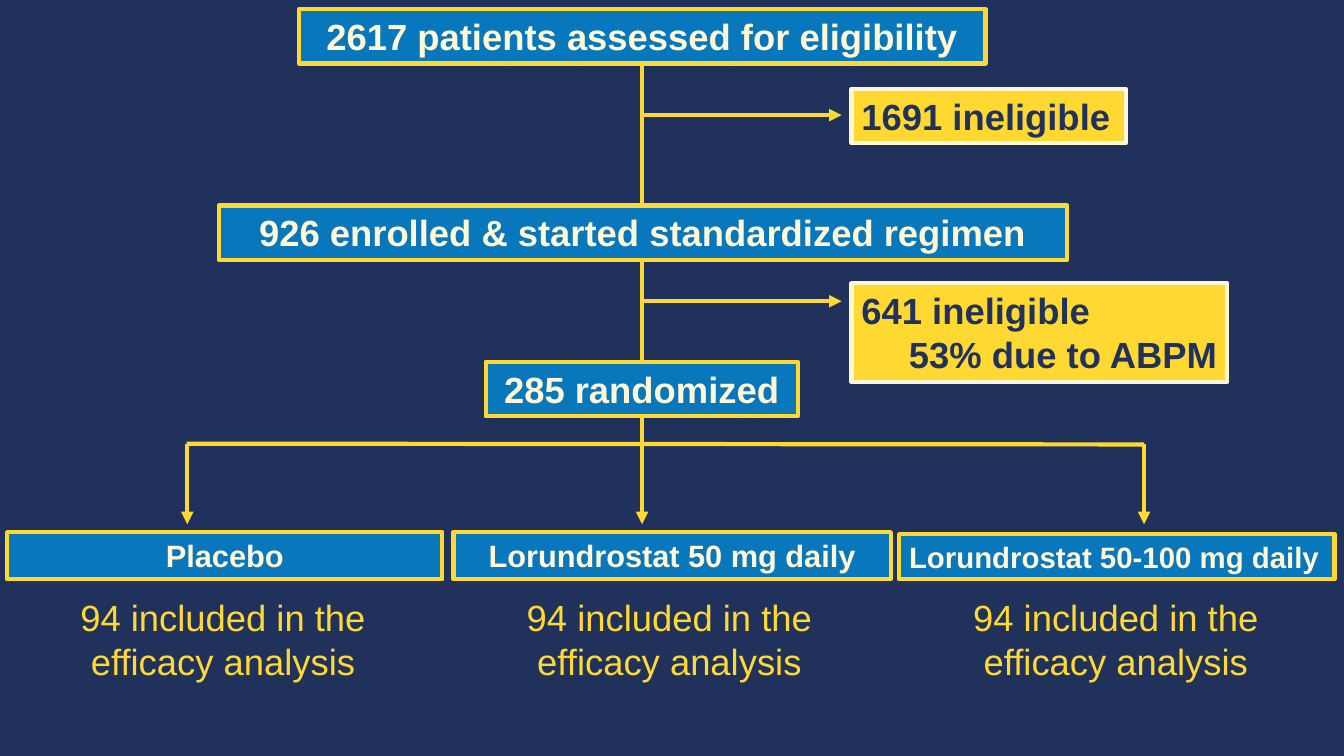
from dataclasses import dataclass

from lxml.etree import SubElement
from pptx import Presentation
from pptx.dml.color import RGBColor as Rgb
from pptx.enum.shapes import MSO_CONNECTOR as Conn, MSO_SHAPE as Form
from pptx.enum.text import MSO_ANCHOR as Anchor, PP_ALIGN as Align
from pptx.oxml.ns import qn
from pptx.slide import Slide
from pptx.text.text import TextFrame
from pptx.util import Cm, Pt

HUES = {
    "navy": "20325C",
    "blue": "0877BC",
    "gold": "FFD932",
    "cream": "FFF7D6",
}
MID = 16.18
FORK = 11.18
TIP = 13.21
SIDE = 21.21


@dataclass
class Box:
    text: str
    left: float
    top: float
    width: float
    height: float = 1.37
    size: int = 26
    aligns: tuple[Align, ...] = (Align.CENTER,)
    fill: str = "blue"
    edge: str = "gold"
    ink: str = "cream"


@dataclass
class Link:
    x1: float
    y1: float
    x2: float
    y2: float
    arrow: bool = False


STAGES = [
    Box("2617 patients assessed for eligibility", 7.54, 0.23, 17.3),
    Box("926 enrolled & started standardized regimen", 5.51, 5.18, 21.39),
    Box("285 randomized", 12.24, 9.12, 7.87),
]
LOSSES = [
    Box("1691 ineligible", 21.46, 2.24, 6.91, 1.37, 26,
        (Align.LEFT,), "gold", "cream", "navy"),
    Box("641 ineligible\n53% due to ABPM", 21.46, 7.14, 9.47, 2.49, 26,
        (Align.LEFT, Align.RIGHT), "gold", "cream", "navy"),
]
ARMS = [
    Box("Placebo", 0.18, 13.41, 10.97, 1.19, 22),
    Box("Lorundrostat 50 mg daily", 11.43, 13.41, 11.02, 1.19, 22),
    Box("Lorundrostat 50-100 mg daily", 22.66, 13.46, 10.97, 1.14, 21,
        (Align.LEFT,)),
]
LINKS = [
    Link(MID, 1.6, MID, 5.18),
    Link(MID, 6.55, MID, 9.12),
    Link(MID, 10.49, MID, TIP, True),
    Link(4.7, FORK, 28.83, FORK + 0.02),
    Link(4.72, FORK, 4.72, TIP, True),
    Link(28.83, FORK + 0.02, 28.83, TIP, True),
    Link(MID, 2.9, SIDE, 2.9, True),
    Link(MID, 7.59, SIDE, 7.59, True),
]


def tint(name: str) -> Rgb:
    return Rgb.from_string(HUES[name])


def write(frame: TextFrame, text: str, size: int, ink: str, bold: bool,
          aligns: tuple[Align, ...]) -> None:
    frame.text = text
    frame.word_wrap = True
    frame.vertical_anchor = Anchor.TOP
    for para, align in zip(frame.paragraphs, aligns):
        para.alignment = align
        for run in para.runs:
            run.font.name = "Arial"
            run.font.size = Pt(size)
            run.font.bold = bold
            run.font.color.rgb = tint(ink)


def draw_box(slide: Slide, box: Box) -> None:
    shape = slide.shapes.add_shape(
        Form.RECTANGLE, Cm(box.left), Cm(box.top), Cm(box.width), Cm(box.height))
    shape.shadow.inherit = False
    shape.fill.solid()
    shape.fill.fore_color.rgb = tint(box.fill)
    shape.line.color.rgb = tint(box.edge)
    shape.line.width = Pt(3)
    write(shape.text_frame, box.text, box.size, box.ink, True, box.aligns)


def draw_link(slide: Slide, link: Link) -> None:
    line = slide.shapes.add_connector(
        Conn.STRAIGHT, Cm(link.x1), Cm(link.y1), Cm(link.x2), Cm(link.y2))
    line.line.color.rgb = tint("gold")
    line.line.width = Pt(3)
    if link.arrow:
        SubElement(line.line._get_or_add_ln(), qn("a:tailEnd"), type="triangle")
    SubElement(line._element.spPr, qn("a:effectLst"))


def draw_note(slide: Slide, left: float) -> None:
    note = slide.shapes.add_textbox(Cm(left), Cm(14.88), Cm(11.05), Cm(2.49))
    write(note.text_frame, "94 included in the efficacy analysis", 26, "gold",
          False, (Align.CENTER,))


def main() -> None:
    deck = Presentation()
    deck.slide_width, deck.slide_height = Cm(33.87), Cm(19.05)
    slide = deck.slides.add_slide(deck.slide_layouts[6])
    slide.background.fill.solid()
    slide.background.fill.fore_color.rgb = tint("navy")
    for link in LINKS:
        draw_link(slide, link)
    for box in STAGES + LOSSES + ARMS:
        draw_box(slide, box)
    for col in range(len(ARMS)):
        draw_note(slide, 0.1 + 11.25 * col)
    deck.save("out.pptx")


if __name__ == "__main__":
    main()
